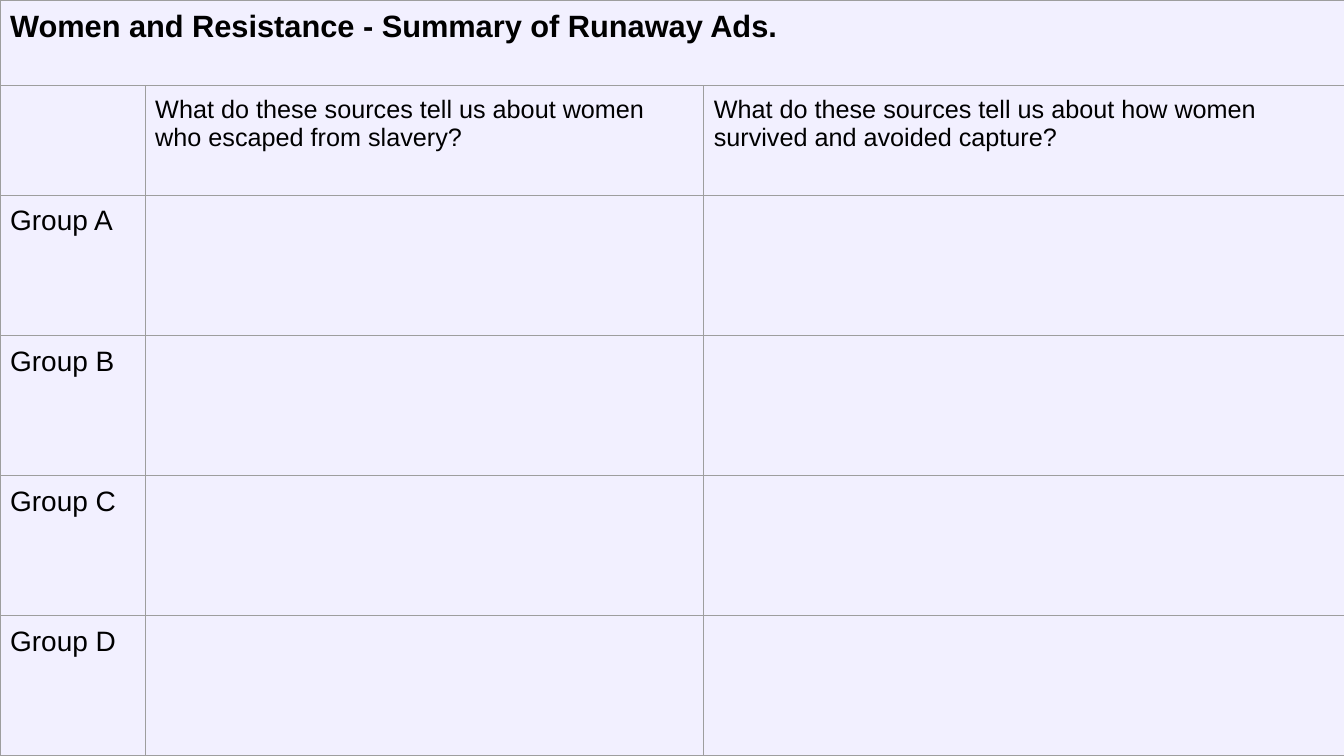
from dataclasses import dataclass

from lxml import etree
from pptx import Presentation
from pptx.dml.color import RGBColor
from pptx.oxml.ns import qn
from pptx.util import Inches, Pt


@dataclass(frozen=True)
class Theme:
    font: str = "Arial"
    paper: str = "F2F0FF"
    ink: str = "000000"
    rule: str = "9E9E9E"
    rule_width: float = 0.75
    title_size: int = 22
    question_size: int = 18
    group_size: int = 20


theme = Theme()


def write_cell(cell, words, size, bold=False):
    para = cell.text_frame.paragraphs[0]
    para.font.size = Pt(size)
    if not words:
        return
    span = para.add_run()
    span.text = words
    span.font.name = theme.font
    span.font.size = Pt(size)
    span.font.bold = bold
    span.font.color.rgb = RGBColor.from_string(theme.ink)


def border_cell(cell):
    """Draw a thin line on all four sides; the lines must precede the fill."""
    properties = cell._tc.get_or_add_tcPr()
    for place, side in enumerate(("a:lnL", "a:lnR", "a:lnT", "a:lnB")):
        line = etree.Element(qn(side), w=str(Pt(theme.rule_width)))
        fill = etree.SubElement(line, qn("a:solidFill"))
        etree.SubElement(fill, qn("a:srgbClr"), val=theme.rule)
        properties.insert(place, line)


deck = Presentation()
deck.slide_width, deck.slide_height = Inches(13.33), Inches(7.5)
page = deck.slides.add_slide(deck.slide_layouts[6])
page.background.fill.solid()
page.background.fill.fore_color.rgb = RGBColor.from_string(theme.paper)

column_widths = [1.44, 5.54, 6.35]
row_heights = [0.85, 1.09] + [1.39] * 4
rows = [
    (theme.title_size, ["Women and Resistance - Summary of Runaway Ads.", "", ""]),
    (theme.question_size, [
        "",
        "What do these sources tell us about women who escaped from slavery?",
        "What do these sources tell us about how women survived and avoided capture?",
    ]),
]
rows += [(theme.group_size, [f"Group {letter}", "", ""]) for letter in "ABCD"]

table = page.shapes.add_table(
    len(rows), len(column_widths), 0, 0, deck.slide_width, deck.slide_height
).table
table.first_row = table.horz_banding = False
for column, width in zip(table.columns, column_widths):
    column.width = Inches(width)

for r, (height, (size, texts)) in enumerate(zip(row_heights, rows)):
    table.rows[r].height = Inches(height)
    for c, words in enumerate(texts):
        cell = table.cell(r, c)
        cell.margin_left = cell.margin_right = Inches(0.1)
        cell.margin_top = cell.margin_bottom = Inches(0.1)
        cell.fill.solid()
        cell.fill.fore_color.rgb = RGBColor.from_string(theme.paper)
        border_cell(cell)
        write_cell(cell, words, size, bold=r == 0)

table.cell(0, 0).merge(table.cell(0, len(column_widths) - 1))

deck.save("out.pptx")
